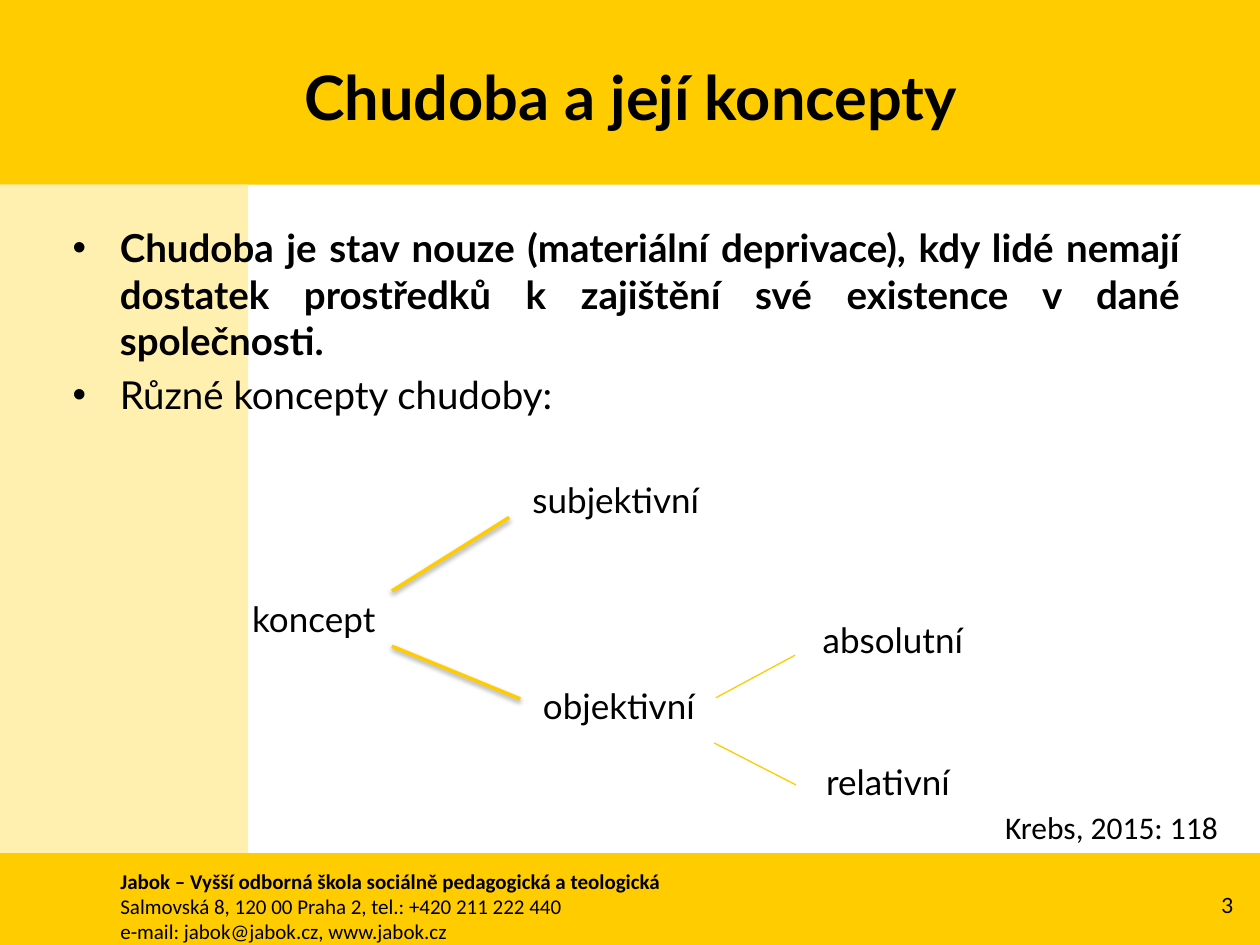
from dataclasses import dataclass

from lxml import etree
from pptx import Presentation
from pptx.dml.color import RGBColor
from pptx.enum.shapes import MSO_CONNECTOR, MSO_SHAPE
from pptx.enum.text import MSO_ANCHOR, PP_ALIGN
from pptx.oxml.ns import qn
from pptx.slide import Slide
from pptx.util import Pt

RECTANGLE = MSO_SHAPE.RECTANGLE
STRAIGHT = MSO_CONNECTOR.STRAIGHT
TOP, MIDDLE = MSO_ANCHOR.TOP, MSO_ANCHOR.MIDDLE
LEFT, CENTER = PP_ALIGN.LEFT, PP_ALIGN.CENTER
RIGHT, JUSTIFY = PP_ALIGN.RIGHT, PP_ALIGN.JUSTIFY

COLORS = {"gold": "FFCC00", "cream": "FFF0AF", "text": "000000", "shadow": "000000"}
WIDTH, HEIGHT = 720, 540
CONCEPT_HEIGHT = 31.5
BULLET_INDENT = 27


@dataclass
class Band:
    left: float
    top: float
    width: float
    height: float
    color: str


@dataclass
class Line:
    text: str
    bold: bool = False
    align: PP_ALIGN = LEFT
    bullet: bool = False


@dataclass
class TextBlock:
    left: float
    top: float
    width: float
    height: float
    lines: list[Line]
    size: float
    font: str = "Lato"
    anchor: MSO_ANCHOR = TOP
    spacing: float = 0


@dataclass
class Branch:
    start: tuple[float, float]
    end: tuple[float, float]
    weight: float
    shadow: bool


BANDS = [
    Band(0, 0, WIDTH, 105.5, "gold"),
    Band(0, 105.5, 141.8, 434.5, "cream"),
    Band(0, 487.5, WIDTH, 52.5, "gold"),
]

DEFINITION = (
    "Chudoba je stav nouze (materiální deprivace), kdy lidé nemají "
    "dostatek prostředků k zajištění své existence v dané společnosti."
)

TEXT_BLOCKS = [
    TextBlock(61.7, 492.5, 590, 51, [
        Line("Jabok – Vyšší odborná škola sociálně pedagogická a teologická", bold=True),
        Line("Salmovská 8, 120 00 Praha 2, tel.: +420 211 222 440"),
        Line("e-mail: jabok@jabok.cz, www.jabok.cz"),
    ], 12, "Calibri"),
    TextBlock(666.5, 502.5, 45.5, 29, [Line("3", align=RIGHT)], 12, anchor=MIDDLE),
    TextBlock(36.5, 10, 648, 90,
              [Line("Chudoba a její koncepty", bold=True, align=CENTER)], 35, anchor=MIDDLE),
    TextBlock(34.4, 124.7, 647, 120, [
        Line(DEFINITION, bold=True, align=JUSTIFY, bullet=True),
        Line("Různé koncepty chudoby:", bullet=True),
    ], 22, spacing=4.4),
    TextBlock(567.2, 458, 137.5, 29, [Line("Krebs, 2015: 118")], 18, "Calibri"),
]

CONCEPTS = [
    ("koncept", 137, 337.7, 87),
    ("subjektivní", 297.2, 269.8, 158),
    ("objektivní", 303.2, 387.5, 113),
    ("absolutní", 463, 350, 170),
    ("relativní", 465, 431.2, 170),
]

BRANCHES = [
    Branch((224, 337.7), (291, 295.7), 2, True),
    Branch((224, 369.3), (297.3, 399.4), 2, True),
    Branch((409.1, 398.7), (454.3, 374.4), 0.75, False),
    Branch((408.2, 424.6), (454.8, 448.5), 0.75, False),
]


def rgb(name: str) -> RGBColor:
    return RGBColor.from_string(COLORS[name])


def draw_band(slide: Slide, band: Band) -> None:
    shape = slide.shapes.add_shape(
        RECTANGLE, Pt(band.left), Pt(band.top), Pt(band.width), Pt(band.height))
    shape.shadow.inherit = False
    shape.fill.solid()
    shape.fill.fore_color.rgb = rgb(band.color)
    shape.line.fill.background()


def draw_text(slide: Slide, block: TextBlock) -> None:
    box = slide.shapes.add_textbox(
        Pt(block.left), Pt(block.top), Pt(block.width), Pt(block.height))
    frame = box.text_frame
    frame.word_wrap = True
    frame.vertical_anchor = block.anchor
    for index, line in enumerate(block.lines):
        paragraph = frame.add_paragraph() if index else frame.paragraphs[0]
        paragraph.alignment = line.align
        if index and block.spacing:
            paragraph.space_before = Pt(block.spacing)
        if line.bullet:
            properties = paragraph._p.get_or_add_pPr()
            properties.set("marL", str(Pt(BULLET_INDENT)))
            properties.set("indent", str(-Pt(BULLET_INDENT)))
            etree.SubElement(properties, qn("a:buFont"), typeface="Arial")
            etree.SubElement(properties, qn("a:buChar"), char="•")
        run = paragraph.add_run()
        run.text = line.text
        run.font.name = block.font
        run.font.size = Pt(block.size)
        run.font.bold = line.bold
        run.font.color.rgb = rgb("text")


def draw_branch(slide: Slide, branch: Branch) -> None:
    connector = slide.shapes.add_connector(
        STRAIGHT, *(Pt(value) for value in branch.start + branch.end))
    connector.line.color.rgb = rgb("gold")
    connector.line.width = Pt(branch.weight)
    effects = etree.SubElement(connector._element.spPr, qn("a:effectLst"))
    if branch.shadow:
        shadow = etree.SubElement(
            effects, qn("a:outerShdw"), blurRad=str(Pt(3.1)), dist=str(Pt(1.6)),
            dir="5400000", rotWithShape="0")
        color = etree.SubElement(shadow, qn("a:srgbClr"), val=COLORS["shadow"])
        etree.SubElement(color, qn("a:alpha"), val="38000")


def main() -> None:
    presentation = Presentation()
    presentation.slide_width = Pt(WIDTH)
    presentation.slide_height = Pt(HEIGHT)
    slide = presentation.slides.add_slide(presentation.slide_layouts[6])
    for band in BANDS:
        draw_band(slide, band)
    for block in TEXT_BLOCKS:
        draw_text(slide, block)
    for branch in BRANCHES:
        draw_branch(slide, branch)
    for name, left, top, width in CONCEPTS:
        draw_text(slide, TextBlock(left, top, width, CONCEPT_HEIGHT, [Line(name)], 20))
    presentation.save("out.pptx")


if __name__ == "__main__":
    main()
